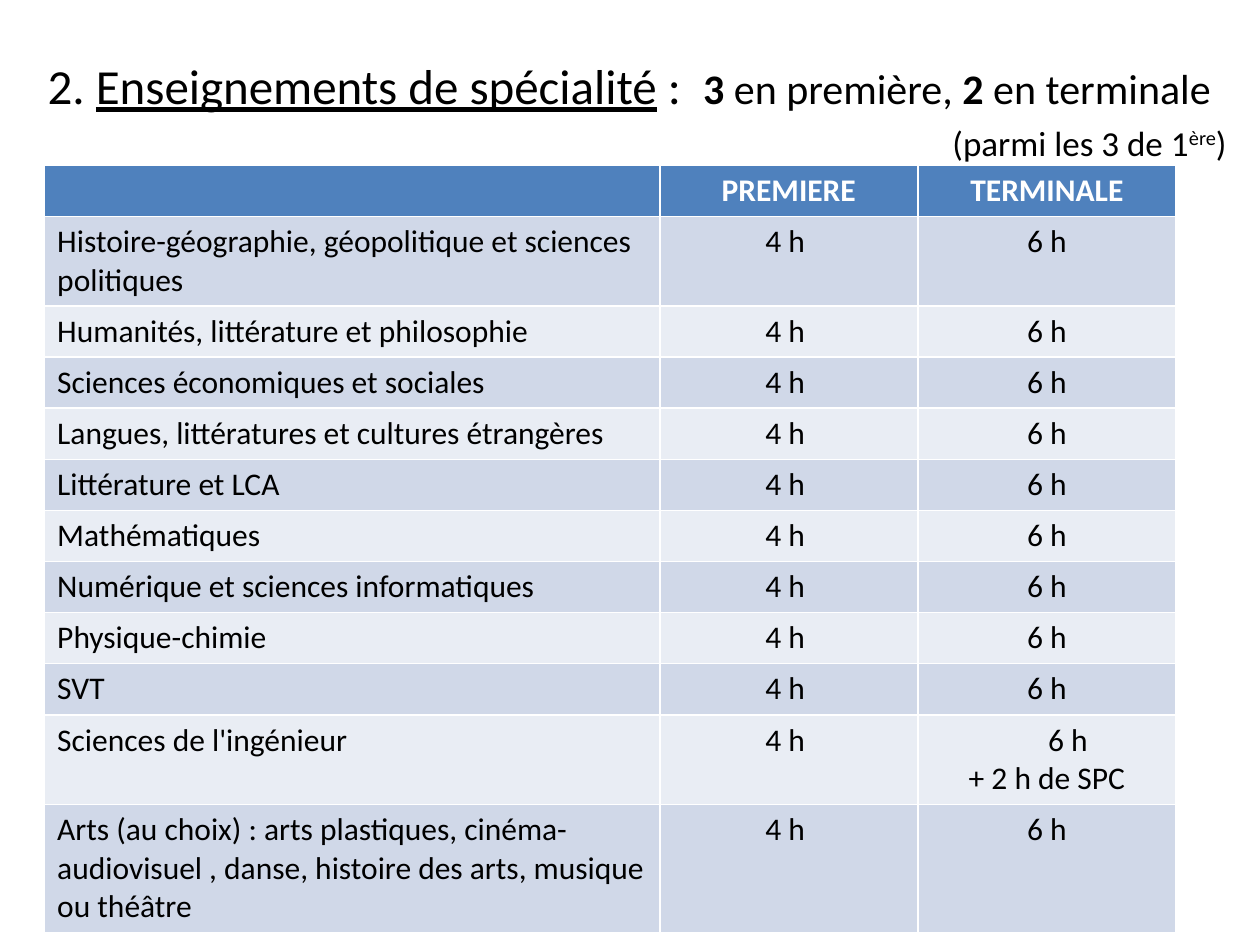
from pptx import Presentation
from pptx.dml.color import RGBColor
from pptx.enum.text import MSO_ANCHOR, MSO_AUTO_SIZE, PP_ALIGN
from pptx.util import Pt

BLACK = RGBColor(0, 0, 0)
WHITE = RGBColor(255, 255, 255)
BLUE = RGBColor(0x4F, 0x81, 0xBD)
BANDS = [RGBColor(0xD0, 0xD8, 0xE8), RGBColor(0xE9, 0xED, 0xF4)]

SUBJECTS = [
    "Histoire-géographie, géopolitique et sciences politiques",
    "Humanités, littérature et philosophie",
    "Sciences économiques et sociales",
    "Langues, littératures et cultures étrangères",
    "Littérature et LCA",
    "Mathématiques",
    "Numérique et sciences informatiques",
    "Physique-chimie",
    "SVT",
    "Sciences de l'ingénieur",
    "Arts (au choix) : arts plastiques, cinéma-audiovisuel , danse, "
    "histoire des arts, musique ou théâtre",
]
EXTRA = {"Sciences de l'ingénieur": "6 h \n+ 2 h de SPC"}


class Deck:
    """Holds the text style and the current slide."""

    def __init__(self, slide, font="Calibri"):
        self.slide = slide
        self.font = font

    def run(self, para, text, color=BLACK, raised=False, **form):
        """Add one run of text in the given format."""
        run = para.add_run()
        run.text = text
        for key, value in {"name": self.font, "bold": False, **form}.items():
            setattr(run.font, key, value)
        run.font.color.rgb = color
        if raised:
            run.font._element.set("baseline", "30000")

    def indent(self, para, left):
        """Set the left margin of a paragraph."""
        para._p.get_or_add_pPr().set("marL", str(Pt(left)))

    def title(self, left, top, width, height, lines):
        """Place the title and fill it line by line."""
        box = self.slide.shapes.title
        place = {"left": left, "top": top, "width": width, "height": height}
        for key, value in place.items():
            setattr(box, key, Pt(value))
        frame = box.text_frame
        form = {"word_wrap": True, "auto_size": MSO_AUTO_SIZE.NONE,
                "vertical_anchor": MSO_ANCHOR.TOP}
        for key, value in form.items():
            setattr(frame, key, value)
        for i, (left, gap, runs) in enumerate(lines):
            para = frame.add_paragraph() if i else frame.paragraphs[0]
            para.alignment = PP_ALIGN.LEFT
            para.space_before = Pt(gap)
            self.indent(para, left)
            for text, size, form in runs:
                self.run(para, text, size=Pt(size), **form)

    def cell(self, cell, text, fill, align, **form):
        """Fill one table cell, one paragraph per line."""
        cell.fill.solid()
        cell.fill.fore_color.rgb = fill
        frame = cell.text_frame
        for i, line in enumerate(text.split("\n")):
            para = frame.add_paragraph() if i else frame.paragraphs[0]
            para.alignment = align
            self.run(para, line, size=Pt(18), **form)

    def table(self, left, top, widths, high, rows):
        """Add a table with a header row and banded rows."""
        grid = self.slide.shapes.add_table(
            len(rows), len(widths), Pt(left), Pt(top),
            Pt(sum(widths)), Pt(high * len(rows))).table
        for col, width in zip(grid.columns, widths):
            col.width = Pt(width)
        for r, row in enumerate(rows):
            grid.rows[r].height = Pt(high)
            fill = BANDS[(r - 1) % 2] if r else BLUE
            form = {} if r else {"color": WHITE, "bold": True}
            for c, text in enumerate(row):
                align = PP_ALIGN.CENTER if c else PP_ALIGN.LEFT
                self.cell(grid.cell(r, c), text, fill, align, **form)
        return grid


def main():
    show = Presentation()
    show.slide_width, show.slide_height = Pt(720), Pt(540)
    deck = Deck(show.slides.add_slide(show.slide_layouts[5]))

    # Title: left margin, space before and runs of each line
    deck.title(20, 28, 700, 70.6, [
        (0, 0, [("2. ", 28, {}),
                ("Enseignements de spécialité", 28, {"underline": True}),
                (" :  ", 28, {}),
                ("3", 24, {"bold": True}),
                (" en première, ", 24, {}),
                ("2", 24, {"bold": True}),
                (" en terminale", 24, {})]),
        (517, 4, [("(parmi les 3 de 1", 20, {}),
                  ("ère", 20, {"raised": True}),
                  (")", 20, {})]),
    ])

    # Weekly hours by subject
    rows = [["", "PREMIERE", "TERMINALE"]]
    rows += [[name, "4 h ", EXTRA.get(name, "6 h")] for name in SUBJECTS]
    grid = deck.table(25.5, 94.5, [351.5, 147.5, 147.5], 29.2, rows)
    for r, name in enumerate(SUBJECTS, 1):
        if name in EXTRA:
            deck.indent(grid.cell(r, 2).text_frame.paragraphs[0], 28)

    show.save("out.pptx")


if __name__ == "__main__":
    main()
